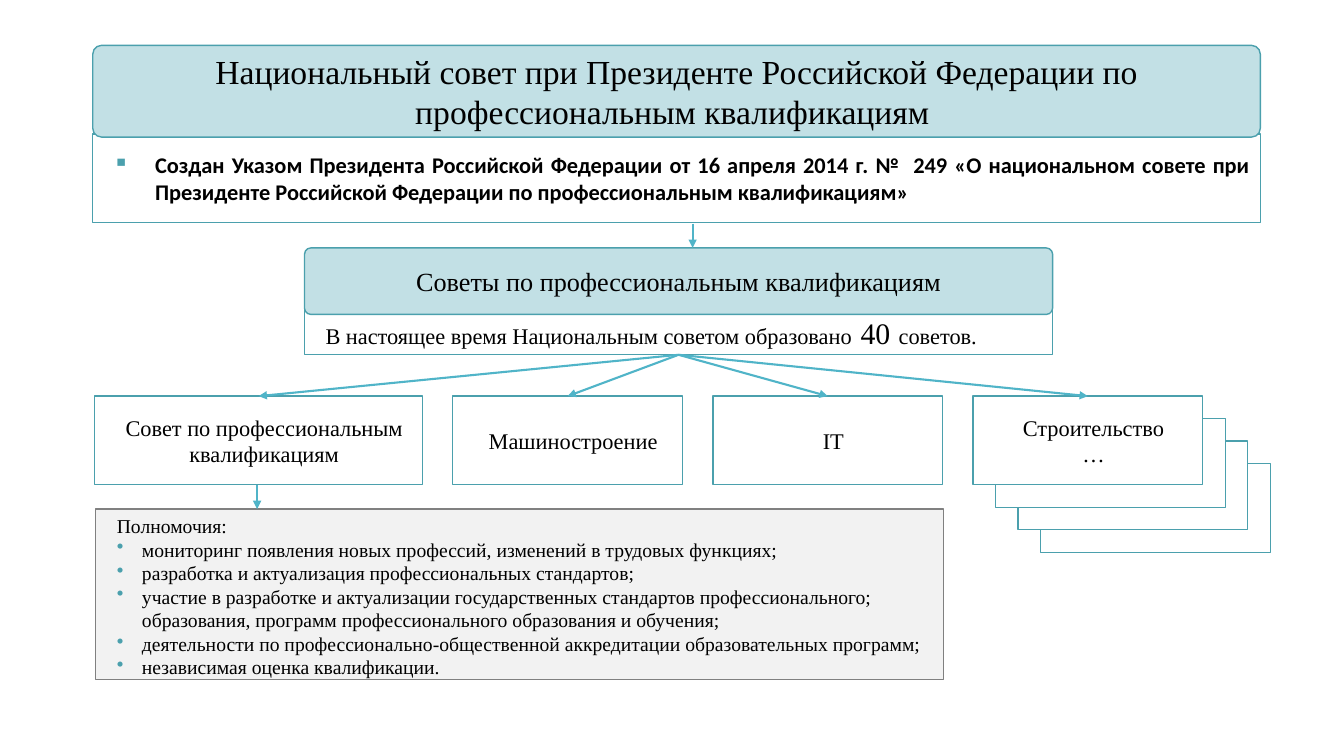
from lxml import etree
from pptx import Presentation
from pptx.dml.color import RGBColor
from pptx.enum.shapes import MSO_CONNECTOR, MSO_SHAPE
from pptx.enum.text import MSO_ANCHOR, PP_ALIGN
from pptx.oxml.ns import qn
from pptx.util import Inches, Pt

RECTANGLE = MSO_SHAPE.RECTANGLE
ROUNDED = MSO_SHAPE.ROUNDED_RECTANGLE
STRAIGHT = MSO_CONNECTOR.STRAIGHT
TOP, MIDDLE = MSO_ANCHOR.TOP, MSO_ANCHOR.MIDDLE
LEFT, CENTER, JUSTIFY = PP_ALIGN.LEFT, PP_ALIGN.CENTER, PP_ALIGN.JUSTIFY

SERIF, SANS = "Times New Roman", "Calibri"
WHITE, BLACK, PALE_TEAL, TEAL = "FFFFFF", "000000", "C2E0E5", "4BA0AD"
ARROW_BLUE, PALE_GRAY, GRAY = "50B4C8", "F2F2F2", "808080"

# Grid in inches
MARGIN, FULL_WIDTH = 0.92, 11.58
COUNCILS_LEFT, COUNCILS_WIDTH = 3.02, 7.42
SECTOR_TOP, SECTOR_LEFT, SECTOR_STEP = 3.93, 4.49, 2.58
SECTOR_WIDTH, BOX_HEIGHT = 2.28, 0.88
STACK_OFFSET = 0.223
TEXT_INDENT = 0.11

POWERS = [
    "мониторинг появления новых профессий, изменений в трудовых функциях;",
    "разработка и актуализация профессиональных стандартов;",
    "участие в разработке и актуализации государственных стандартов "
    "профессионального; образования, программ профессионального образования "
    "и обучения;",
    "деятельности по профессионально-общественной аккредитации "
    "образовательных программ;",
    "независимая оценка квалификации.",
]


def color(hex_string):
    return RGBColor.from_string(hex_string)


def add_box(slide, left, top, width, height, kind=RECTANGLE, fill=WHITE,
            line=TEAL, anchor=MIDDLE):
    shape = slide.shapes.add_shape(
        kind, Inches(left), Inches(top), Inches(width), Inches(height))
    shape.shadow.inherit = False
    shape.fill.solid()
    shape.fill.fore_color.rgb = color(fill)
    shape.line.color.rgb = color(line)
    shape.line.width = Pt(1)
    if kind == ROUNDED:
        shape.adjustments[0] = 0.096
    shape.text_frame.word_wrap = True
    shape.text_frame.vertical_anchor = anchor
    return shape


def add_bullet(paragraph, character):
    properties = paragraph._p.get_or_add_pPr()
    bullet_color = etree.SubElement(properties, qn("a:buClr"))
    etree.SubElement(bullet_color, qn("a:srgbClr"), val=TEAL)
    etree.SubElement(properties, qn("a:buChar"), char=character)


def write(paragraph, text, size, align=CENTER, margin=0, hanging=0,
          bullet=None, font=SERIF, bold=False):
    """Fill and format one paragraph; a line feed in text is a line break."""
    paragraph.text = text
    paragraph.alignment = align
    properties = paragraph._p.get_or_add_pPr()
    properties.set("marL", str(Inches(margin)))
    properties.set("indent", str(-Inches(hanging)))
    if bullet:
        add_bullet(paragraph, bullet)
    paragraph.font.name = font
    paragraph.font.size = Pt(size)
    paragraph.font.bold = bold
    paragraph.font.color.rgb = color(BLACK)


def add_arrow(slide, start=(0, 0), end=(0, 0), source=None, target=None):
    """Draw between two points, or from source's bottom to target's top."""
    arrow = slide.shapes.add_connector(
        STRAIGHT, *(Inches(value) for value in (*start, *end)))
    if source is not None:
        arrow.begin_connect(source, 2)
        arrow.end_connect(target, 0)
    arrow.line.color.rgb = color(ARROW_BLUE)
    arrow.line.width = Pt(1.5)
    etree.SubElement(arrow.line._get_or_add_ln(), qn("a:tailEnd"),
                     type="triangle")
    etree.SubElement(arrow._element.spPr, qn("a:effectLst"))


def add_heading(slide, text, size, left, top, width, height):
    heading = add_box(slide, left, top, width, height, ROUNDED, PALE_TEAL)
    write(heading.text_frame.paragraphs[0], text, size)


def add_national_council(slide):
    decree = add_box(slide, MARGIN, 1.33, FULL_WIDTH, BOX_HEIGHT)
    write(decree.text_frame.paragraphs[0],
          "Создан Указом Президента Российской Федерации от 16 апреля 2014 г. "
          "№  249 «О национальном совете при Президенте Российской Федерации "
          "по профессиональным квалификациям» ",
          16, JUSTIFY, 0.52, 0.42, "▪", SANS, True)
    add_heading(slide, "Национальный совет при Президенте Российской Федерации "
                "по профессиональным квалификациям ",
                24, MARGIN, 0.45, FULL_WIDTH, 0.91)


def add_councils(slide):
    summary = add_box(slide, COUNCILS_LEFT, 3.04, COUNCILS_WIDTH, 0.48)
    paragraph = summary.text_frame.paragraphs[0]
    write(paragraph, "В настоящее время Национальным советом образовано",
          16, JUSTIFY, TEXT_INDENT)
    for text, size in ((" ", 24), ("40", 21.3), (" ", 24), ("советов.", 16)):
        run = paragraph.add_run()
        run.text = text
        run.font.size = Pt(size)
    add_heading(slide, "Советы по профессиональным квалификациям", 18.7,
                COUNCILS_LEFT, 2.46, COUNCILS_WIDTH, 0.66)
    return summary


def add_sectors(slide):
    lefts = [SECTOR_LEFT + SECTOR_STEP * column for column in range(3)]
    for layer in (3, 2, 1):
        shift = STACK_OFFSET * layer
        add_box(slide, lefts[-1] + shift, SECTOR_TOP + shift,
                SECTOR_WIDTH, BOX_HEIGHT)
    sectors = [
        ("Совет по профессиональным\nквалификациям", 0.94, 3.25),
        ("Машиностроение", lefts[0], SECTOR_WIDTH),
        ("IT", lefts[1], SECTOR_WIDTH),
        ("Строительство\n…", lefts[2], SECTOR_WIDTH),
    ]
    boxes = []
    for text, left, width in sectors:
        box = add_box(slide, left, SECTOR_TOP, width, BOX_HEIGHT)
        write(box.text_frame.paragraphs[0], text, 16, margin=TEXT_INDENT)
        boxes.append(box)
    return boxes


def add_powers(slide):
    frame = add_box(slide, 0.95, 5.05, 8.41, 1.69, fill=PALE_GRAY, line=GRAY,
                    anchor=TOP).text_frame
    write(frame.paragraphs[0], "Полномочия:", 14, LEFT, TEXT_INDENT)
    for power in POWERS:
        write(frame.add_paragraph(), power, 14, LEFT, 0.36, 0.25, "•")


def main():
    presentation = Presentation()
    presentation.slide_width = Inches(13.33)
    presentation.slide_height = Inches(7.5)
    slide = presentation.slides.add_slide(presentation.slide_layouts[6])

    add_national_council(slide)
    summary = add_councils(slide)
    sectors = add_sectors(slide)
    add_powers(slide)
    add_arrow(slide, (6.87, 2.22), (6.87, 2.46))
    for sector in sectors:
        add_arrow(slide, source=summary, target=sector)
    add_arrow(slide, (2.55, 4.81), (2.55, 5.05))

    presentation.save("out.pptx")


if __name__ == "__main__":
    main()
